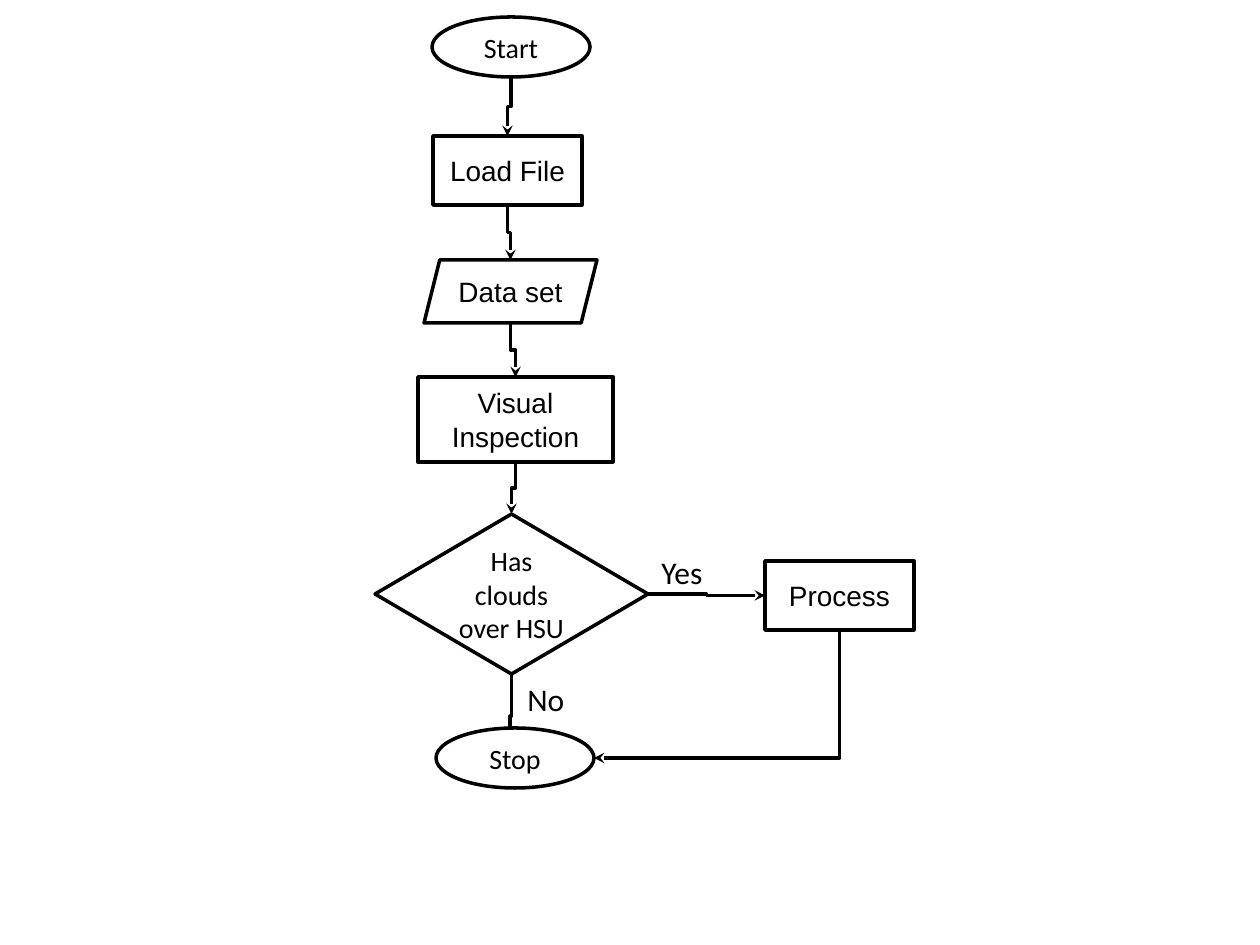
from dataclasses import dataclass

from lxml import etree
from pptx import Presentation
from pptx import util as u
from pptx.dml.color import RGBColor
from pptx.enum import shapes, text
from pptx.oxml.ns import qn

PX = 914400 / 126  # EMU in one px


@dataclass(frozen=True)
class Theme:
    ink: RGBColor = RGBColor(0, 0, 0)
    paper: RGBColor = RGBColor(255, 255, 255)
    line: int = 2
    node_size: int = 16
    label_size: int = 18
    sans: str = "Arial"
    body: str = "Calibri"


T = Theme()
MS = shapes.MSO_SHAPE


def px(n):
    return u.Emu(round(n * PX))


def write(tf, words, font=T.body, size=T.node_size, align=text.PP_ALIGN.LEFT,
          anchor=text.MSO_ANCHOR.TOP, wrap=True):
    """Put one formatted paragraph into a text frame."""
    tf.word_wrap = wrap
    tf.vertical_anchor = anchor
    p = tf.paragraphs[0]
    p.alignment = align
    r = p.add_run()
    r.text = words
    r.font.name, r.font.size = font, u.Pt(size)
    r.font.color.rgb = T.ink


def node(s, kind, box, words, font=T.body):
    """Outlined flowchart shape with centred text."""
    sp = s.shapes.add_shape(kind, *map(px, box))
    sp.shadow.inherit = False
    sp.fill.solid()
    sp.fill.fore_color.rgb = T.paper
    sp.line.color.rgb = T.ink
    sp.line.width = u.Pt(T.line)
    write(sp.text_frame, words, font, align=text.PP_ALIGN.CENTER,
          anchor=text.MSO_ANCHOR.MIDDLE)
    return sp


def label(s, box, words):
    """Branch label beside an arrow."""
    sp = s.shapes.add_textbox(*map(px, box))
    write(sp.text_frame, words, size=T.label_size, wrap=False)
    sp.text_frame.auto_size = text.MSO_AUTO_SIZE.SHAPE_TO_FIT_TEXT


def port(sp, fx, fy):
    """Point on a shape, as fractions of its width and height."""
    return round(sp.left + sp.width * fx), round(sp.top + sp.height * fy)


def arrow(s, start, end, down=False, corner=False):
    """Elbow arrow; down leaves vertically, corner turns only once."""
    (x1, y1), (x2, y2) = start, end
    cx = s.shapes.add_connector(shapes.MSO_CONNECTOR.ELBOW, x1, y1, x2, y2)
    cx.line.color.rgb = T.ink
    cx.line.width = u.Pt(T.line)
    pr = cx._element.spPr
    if down:
        # A quarter turn about the centre swaps the width and the height
        w, h = y2 - y1, abs(x2 - x1)
        cx.left, cx.top = (x1 + x2 - w) // 2, (y1 + y2 - h) // 2
        cx.width, cx.height = w, h
        xfrm = pr.find(qn("a:xfrm"))
        xfrm.attrib.pop("flipH", None)
        xfrm.set("rot", "5400000")
        if x2 > x1:
            xfrm.set("flipV", "1")
    if corner:
        pr.find(qn("a:prstGeom")).set("prst", "bentConnector2")
    etree.SubElement(pr.find(qn("a:ln")), qn("a:tailEnd"), type="stealth")
    etree.SubElement(pr, qn("a:effectLst"))


def main_flow(s, x, y):
    """Steps from the start to the decision, which is returned."""
    steps = [
        (MS.OVAL, (57, 0, 158, 60), "Start", T.body),
        (MS.RECTANGLE, (58, 119, 149, 69), "Load File", T.sans),
        (MS.PARALLELOGRAM, (49, 243, 173, 63), "Data set", T.sans),
        (MS.RECTANGLE, (43, 360, 195, 85), "Visual Inspection", T.sans),
        (MS.DIAMOND, (0, 497, 273, 160), "Has clouds over HSU", T.body),
    ]
    nodes = [node(s, kind, (x + l, y + t, w, h), words, font)
             for kind, (l, t, w, h), words, font in steps]
    for upper, lower in zip(nodes, nodes[1:]):
        arrow(s, port(upper, 0.5, 1), port(lower, 0.5, 0), down=True)
    return nodes[-1]


def branches(s, x, y, decision):
    """Yes and No exits of the decision, both leading to the stop."""
    # Yes branch
    process = node(s, MS.RECTANGLE, (x + 390, y + 14, 149, 69), "Process", T.sans)
    label(s, (x + 274, y, 67, 50), "Yes")
    arrow(s, port(decision, 1, 0.5), port(process, 0, 0.5))
    # No branch, whose arrow runs in behind the stop
    label(s, (x + 140, y + 127, 63, 50), "No")
    arrow(s, port(decision, 0.5, 1), (px(x + 135), px(y + 211)), down=True)
    stop = node(s, MS.OVAL, (x + 61, y + 181, 158, 60), "Stop")
    # Return from the process
    arrow(s, port(process, 0.5, 1), port(stop, 1, 0.5), down=True, corner=True)


def main():
    prs = Presentation()
    prs.slide_width, prs.slide_height = px(1260), px(945)
    s = prs.slides.add_slide(prs.slide_layouts[6])
    decision = main_flow(s, 375, 17)
    branches(s, 375, 547, decision)
    prs.save("out.pptx")


if __name__ == "__main__":
    main()
